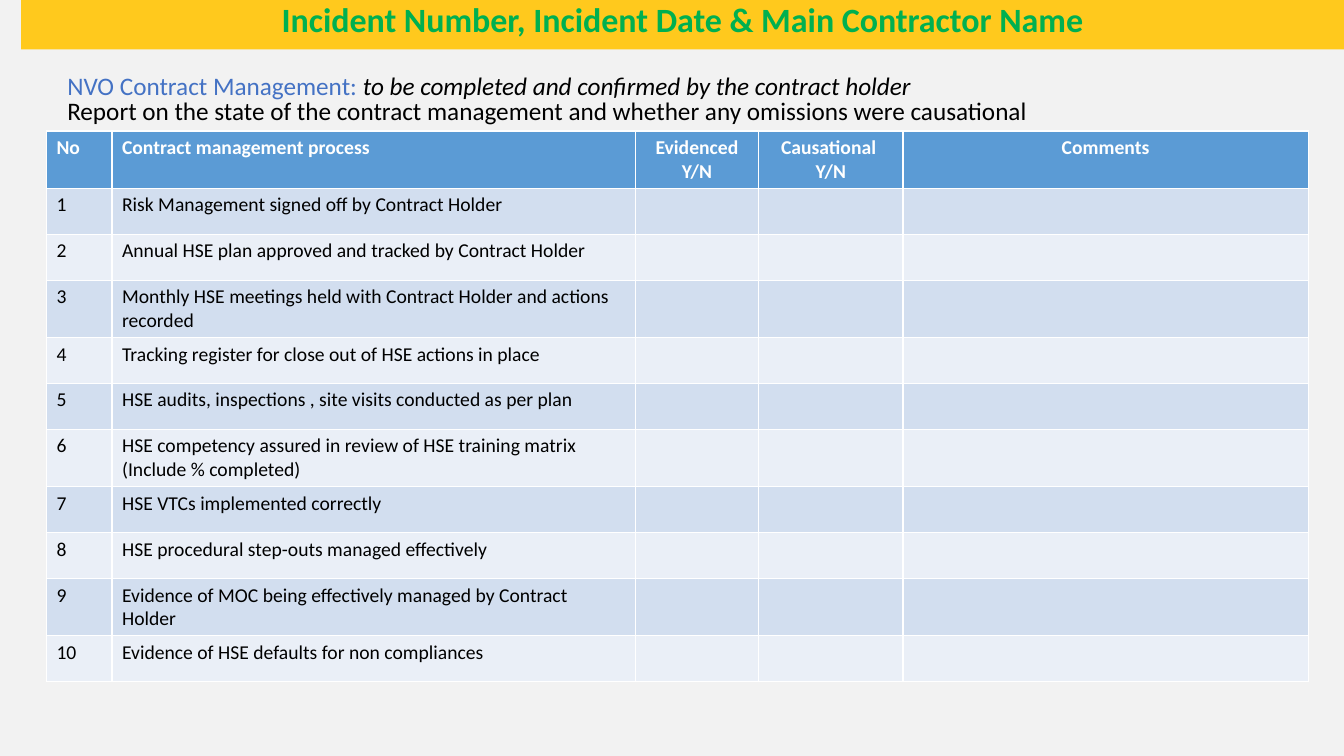
import pptx
import pptx.dml.color
import pptx.enum.shapes
import pptx.enum.text
import pptx.util

Pt = pptx.util.Pt
ALIGN = pptx.enum.text.PP_ALIGN
FONT = "Calibri"

COLOURS = {
    "page": "F2F2F2",
    "banner": "FFC91D",
    "title": "00B050",
    "label": "4472C4",
    "black": "000000",
    "white": "FFFFFF",
    "header": "5B9BD5",
    "odd row": "D2DEEF",
    "even row": "EAEFF7",
}

COLUMN_WIDTHS = [46.8, 373.7, 88.3, 103, 289.6]
ROW_HEIGHT, TALL_ROW_HEIGHT = 32.85, 40.7
TALL_ROWS = {0, 3, 6, 9}  # rows holding two lines of text
HEADERS = ["No", "Contract management process", "Evidenced\nY/N",
           "Causational \nY/N", "Comments"]
PROCESSES = [
    "Risk Management signed off by Contract Holder",
    "Annual HSE plan approved and tracked by Contract Holder",
    "Monthly HSE meetings held with Contract Holder and actions recorded",
    "Tracking register for close out of HSE actions in place",
    "HSE audits, inspections , site visits conducted as per plan",
    "HSE competency assured in review of HSE training matrix (Include % completed)",
    "HSE VTCs implemented correctly",
    "HSE procedural step-outs managed effectively",
    "Evidence of MOC being effectively managed by Contract Holder",
    "Evidence of HSE defaults for non compliances",
]


def colour(name):
    return pptx.dml.color.RGBColor.from_string(COLOURS[name])


def paint(fill, name):
    fill.solid()
    fill.fore_color.rgb = colour(name)


def style(span, size, name, bold=False, italic=False):
    font = span.font
    font.name, font.size = FONT, Pt(size)
    font.bold, font.italic = bold, italic
    font.color.rgb = colour(name)


def add_banner(page, text):
    box = page.shapes.add_shape(pptx.enum.shapes.MSO_SHAPE.RECTANGLE,
                                Pt(15.1), Pt(-0.7), Pt(944.9), Pt(36))
    box.shadow.inherit = False
    paint(box.fill, "banner")
    box.line.fill.background()
    frame = box.text_frame
    frame.text = text
    frame.vertical_anchor = pptx.enum.text.MSO_ANCHOR.MIDDLE
    frame.margin_top, frame.margin_bottom = Pt(0), Pt(4)
    para = frame.paragraphs[0]
    para.alignment = ALIGN.CENTER
    para.line_spacing = 0.9
    style(para.runs[0], 24.3, "title", bold=True)


def add_line(page, top, width, spans):
    """Add one line of text; spans holds (text, colour, italic)."""
    box = page.shapes.add_textbox(Pt(41), Pt(top), Pt(width), Pt(29))
    box.text_frame.word_wrap = True
    para = box.text_frame.paragraphs[0]
    for text, name, italic in spans:
        span = para.add_run()
        span.text = text
        style(span, 18, name, italic=italic)


def fill_cell(cell, text, fill, ink, bold=False, centred=False):
    paint(cell.fill, fill)
    cell.text_frame.text = text
    for para in cell.text_frame.paragraphs:
        para.alignment = ALIGN.CENTER if centred else ALIGN.LEFT
        for span in para.runs:
            style(span, 14, ink, bold)


def add_checklist(page):
    heights = [TALL_ROW_HEIGHT if row in TALL_ROWS else ROW_HEIGHT
               for row in range(len(PROCESSES) + 1)]
    table = page.shapes.add_table(len(heights), len(COLUMN_WIDTHS), Pt(33.2), Pt(93.6),
                                  Pt(sum(COLUMN_WIDTHS)), Pt(sum(heights))).table
    for column, width in zip(table.columns, COLUMN_WIDTHS):
        column.width = Pt(width)
    for row, height in zip(table.rows, heights):
        row.height = Pt(height)

    # Header row
    for index, text in enumerate(HEADERS):
        fill_cell(table.cell(0, index), text, "header", "white", True, index >= 2)

    # Numbered processes, with empty answer cells
    for number, process in enumerate(PROCESSES, 1):
        fill = "odd row" if number % 2 else "even row"
        for index, text in enumerate([str(number), process, "", "", ""]):
            fill_cell(table.cell(number, index), text, fill, "black")


def main():
    deck = pptx.Presentation()
    deck.slide_width, deck.slide_height = Pt(960), Pt(540)
    page = deck.slides.add_slide(deck.slide_layouts[6])
    paint(page.background.fill, "page")

    add_banner(page, "Incident Number, Incident Date & Main Contractor Name")
    add_line(page, 46.8, 710, [
        ("NVO Contract Management: ", "label", False),
        ("to be completed and confirmed by the contract holder", "black", True),
    ])
    add_line(page, 64.8, 861, [
        ("Report on the state of the contract management and whether any "
         "omissions were causational", "black", False),
    ])
    add_checklist(page)
    deck.save("out.pptx")


if __name__ == "__main__":
    main()
